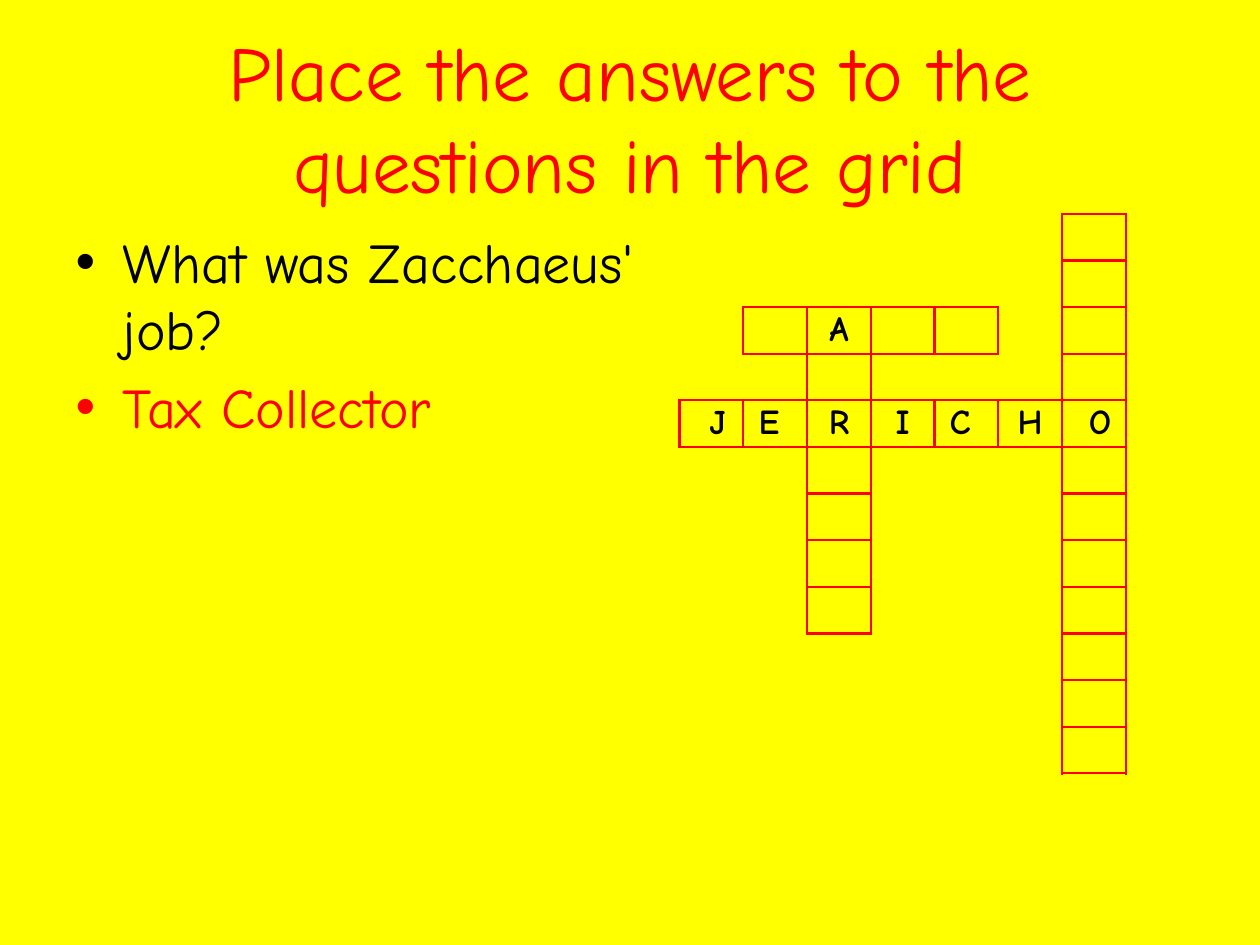
from lxml import etree
from pptx import Presentation
from pptx.dml.color import RGBColor
from pptx.enum.text import MSO_ANCHOR, MSO_AUTO_SIZE, PP_ALIGN
from pptx.oxml.ns import qn
from pptx.util import Cm, Pt

CENTER = PP_ALIGN.CENTER
MIDDLE = MSO_ANCHOR.MIDDLE
NO_FIT = MSO_AUTO_SIZE.NONE

FONT = "Comic Neue"
YELLOW, RED, BLACK = "FFFF00", "FF0000", "000000"
BLANK, OUTSIDE = "_", "."
CROSSWORD = (
    ["......_"] * 2
    + ["._A__._", ".._..._", "JERICHO"]
    + [".._..._"] * 4
    + ["......_"] * 3
)
PADDED = {"J": " J", "E": "E ", "C": "C ", "O": " O"}
SIDES = {"lnL": (0, -1), "lnR": (0, 1), "lnT": (-1, 0), "lnB": (1, 0)}


def color(value):
    return RGBColor.from_string(value)


def style(para, size, fill, bold=False):
    para.font.name = FONT
    para.font.size = Pt(size)
    para.font.bold = bold
    para.font.color.rgb = color(fill)


def place(shape, box):
    shape.left, shape.top, shape.width, shape.height = box


def add_title(page, box, text):
    title = page.shapes.title
    place(title, box)
    frame = title.text_frame
    frame.text = text
    frame.auto_size = NO_FIT
    frame.vertical_anchor = MIDDLE
    frame.paragraphs[0].alignment = CENTER
    style(frame.paragraphs[0], 44, RED)


def add_questions(page, box, lines):
    body = page.placeholders[1]
    place(body, box)
    frame = body.text_frame
    frame.text = "\n".join(text for text, _ in lines)
    frame.auto_size = NO_FIT
    for para, (_, fill) in zip(frame.paragraphs, lines):
        style(para, 32, fill)


def in_word(row, column):
    return (
        0 <= row < len(CROSSWORD)
        and 0 <= column < len(CROSSWORD[0])
        and CROSSWORD[row][column] != OUTSIDE
    )


def draw_borders(cell, row, column):
    properties = cell._tc.get_or_add_tcPr()
    for index, (side, (down, right)) in enumerate(SIDES.items()):
        line = etree.Element(qn(f"a:{side}"), w=str(Pt(1.5)))
        if in_word(row, column) or in_word(row + down, column + right):
            fill = etree.SubElement(line, qn("a:solidFill"))
            etree.SubElement(fill, qn("a:srgbClr"), val=RED)
        else:
            etree.SubElement(line, qn("a:noFill"))
        properties.insert(index, line)


def add_crossword(page, box):
    rows, columns = len(CROSSWORD), len(CROSSWORD[0])
    table = page.shapes.add_table(rows, columns, *box).table
    table.first_row = table.horz_banding = False
    for row, letters in enumerate(CROSSWORD):
        for column, letter in enumerate(letters):
            cell = table.cell(row, column)
            cell.margin_left = cell.margin_right = 0
            cell.margin_top = cell.margin_bottom = 0
            cell.vertical_anchor = MIDDLE
            cell.fill.background()
            draw_borders(cell, row, column)
            if letter not in (BLANK, OUTSIDE):
                cell.text = PADDED.get(letter, letter)
                para = cell.text_frame.paragraphs[0]
                para.alignment = CENTER
                style(para, 20, BLACK, bold=True)


def main():
    deck = Presentation()
    deck.slide_width, deck.slide_height = Cm(25.4), Cm(19.05)
    page = deck.slides.add_slide(deck.slide_layouts[1])
    page.background.fill.solid()
    page.background.fill.fore_color.rgb = color(YELLOW)
    add_title(
        page,
        (Cm(1.27), Cm(0.76), Cm(22.86), Cm(3.18)),
        "Place the answers to the questions in the grid",
    )
    add_questions(
        page,
        (Cm(1.27), Cm(4.45), Cm(12.83), Cm(12.57)),
        [("What was Zacchaeus' job?", BLACK), ("Tax Collector", RED)],
    )
    add_crossword(page, (Cm(13.7), Cm(4.31), Cm(9), Cm(11.29)))
    deck.save("out.pptx")


if __name__ == "__main__":
    main()
